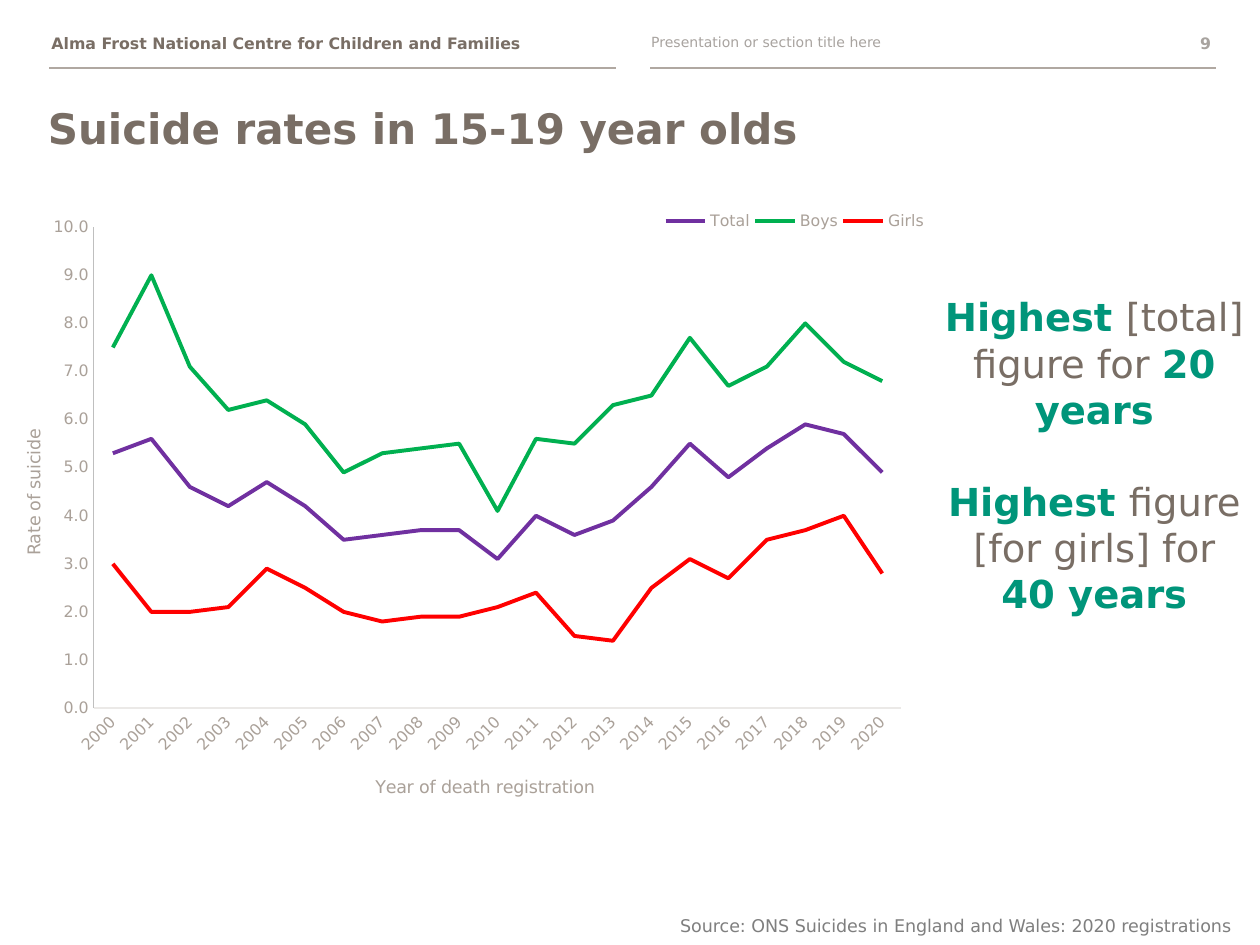
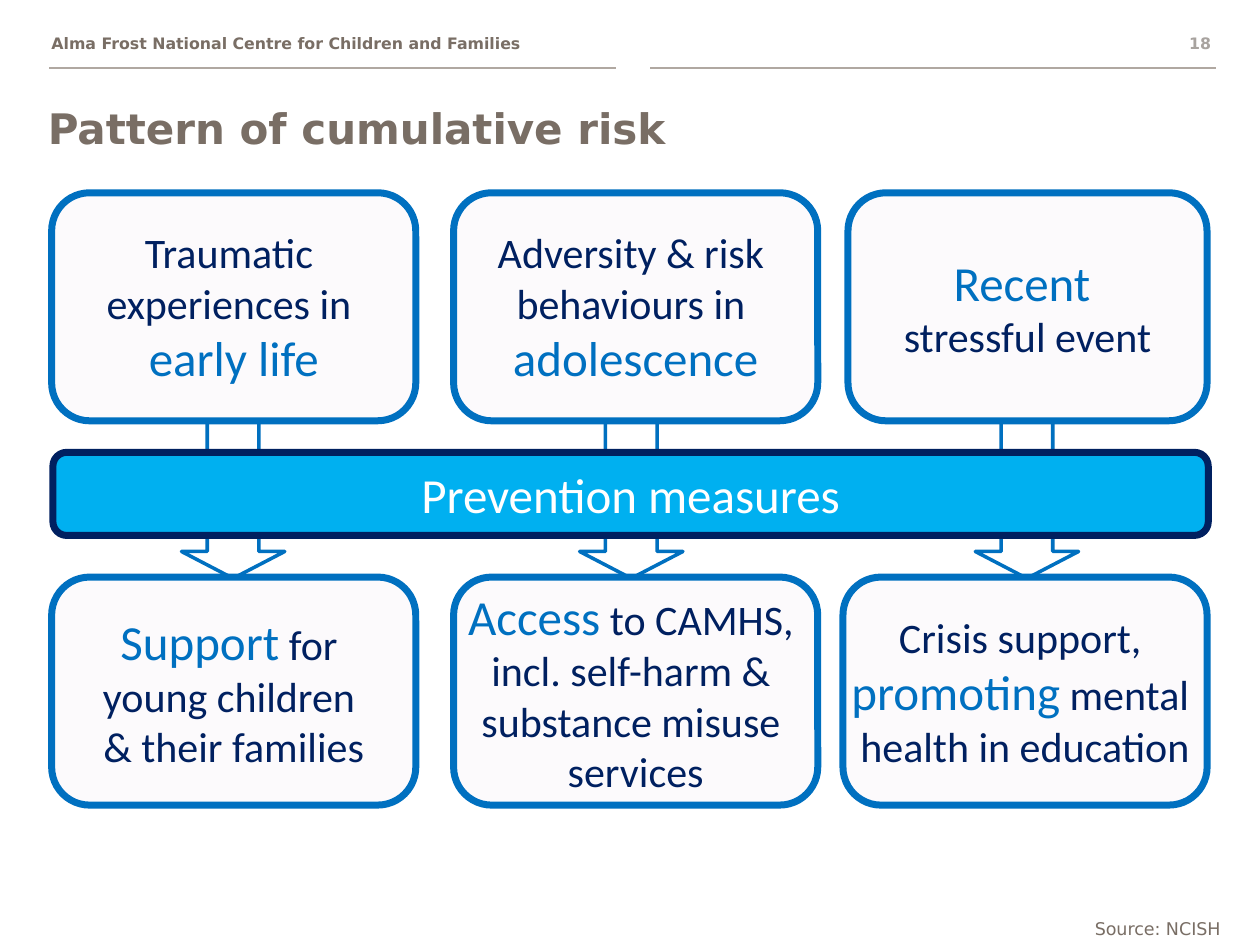
from dataclasses import dataclass

from lxml.etree import SubElement
from pptx import Presentation
from pptx.chart.data import CategoryChartData
from pptx.dml.color import RGBColor
from pptx.enum.chart import XL_CHART_TYPE as ChartType
from pptx.enum.chart import XL_LEGEND_POSITION as LegendPosition
from pptx.enum.chart import XL_TICK_MARK as TickMark
from pptx.enum.shapes import MSO_CONNECTOR as Connector
from pptx.enum.shapes import MSO_SHAPE as Shape
from pptx.enum.text import MSO_ANCHOR as Anchor
from pptx.enum.text import MSO_AUTO_SIZE as AutoSize
from pptx.enum.text import PP_ALIGN as Align
from pptx.oxml.ns import qn
from pptx.util import Inches, Pt


@dataclass(frozen=True)
class Theme:
    font: str = "DejaVu Sans"
    card_font: str = "Calibri"
    brown: str = "796E65"
    rule: str = "B0A8A1"
    header_grey: str = "A8A39F"
    source_grey: str = "7F7F7F"
    chart_grey: str = "AAA199"
    category_line: str = "EBE9E7"
    value_line: str = "BFBFBF"
    green: str = "00957A"
    blue: str = "0070C0"
    bright_blue: str = "00B0F0"
    navy: str = "002060"
    card_fill: str = "FCFAFC"
    white: str = "FFFFFF"
    title: int = 24
    callout: int = 22
    card: int = 24
    card_key: int = 28
    source: int = 10
    header: int = 9
    section: int = 8


THEME = Theme()


def write(frame, paragraphs, font=THEME.font, size=THEME.source, color=THEME.brown,
          bold=False, align=Align.LEFT, anchor=Anchor.TOP, wrap=True, gap=0):
    """Fill a frame; each paragraph is a string or a list of (text, overrides)."""
    frame.word_wrap = wrap
    frame.auto_size = AutoSize.NONE
    frame.vertical_anchor = anchor
    for index, runs in enumerate(paragraphs):
        paragraph = frame.add_paragraph() if index else frame.paragraphs[0]
        paragraph.alignment = align
        paragraph.space_before = Pt(gap if index else 0)
        for text, changes in [(runs, {})] if isinstance(runs, str) else runs:
            look = {"size": size, "color": color, "bold": bold} | changes
            run = paragraph.add_run()
            run.text = text
            run.font.name = font
            run.font.size = Pt(look["size"])
            run.font.bold = look["bold"]
            run.font.color.rgb = RGBColor.from_string(look["color"])


def place_in_chart(element, **position):
    """Give a chart part a manual layout in fractions of the chart."""
    layout = element.find(qn("c:layout"))
    if layout is None:
        layout = element.makeelement(qn("c:layout"))
        overlay = element.find(qn("c:overlay"))
        if overlay is None:
            element.insert(0, layout)
        else:
            overlay.addprevious(layout)
    for child in list(layout):
        layout.remove(child)
    manual = SubElement(layout, qn("c:manualLayout"))
    for tag, value in position.items():
        SubElement(manual, qn(f"c:{tag}")).set("val", str(value))


deck = Presentation()
deck.slide_width, deck.slide_height = Inches(10), Inches(7.5)

# Shared header, title and source line
pages = [
    dict(title="Suicide rates in 15-19 year olds", number="9",
         section="Presentation or section title here",
         source="Source: ONS Suicides in England and Wales: 2020 registrations",
         source_at=(5.3, 7.21, 4.7), source_color=THEME.source_grey),
    dict(title="Pattern of cumulative risk", number="18", section=None,
         source="Source: NCISH",
         source_at=(8.59, 7.24, 1.41), source_color=THEME.brown),
]
for page in pages:
    slide = deck.slides.add_slide(deck.slide_layouts[5])
    for start, end in [(0.39, 4.89), (5.16, 9.65)]:
        rule = slide.shapes.add_connector(
            Connector.STRAIGHT, Inches(start), Inches(0.54), Inches(end), Inches(0.54))
        rule.line.color.rgb = RGBColor.from_string(THEME.rule)
        rule.line.width = Pt(1)
        SubElement(rule._element.spPr, qn("a:effectLst"))

    title = slide.shapes.title
    title.left, title.top = Inches(0.28), Inches(0.76)
    title.width, title.height = Inches(9), Inches(0.76)
    write(title.text_frame, [page["title"]], size=THEME.title, bold=True)

    left, top, width = page["source_at"]
    small_texts = [
        ("Alma Frost National Centre for Children and Families", 0.31, 0.22, 4.48,
         dict(size=THEME.header, bold=True)),
        (page["section"], 5.07, 0.22, 3.86,
         dict(size=THEME.section, color=THEME.header_grey)),
        (page["number"], 9.13, 0.22, 0.58,
         dict(size=THEME.header, color=THEME.header_grey, bold=True, align=Align.RIGHT)),
        (page["source"], left, top, width, dict(color=page["source_color"])),
    ]
    for text, left, top, width, look in small_texts:
        if text:
            box = slide.shapes.add_textbox(
                Inches(left), Inches(top), Inches(width), Inches(0.26))
            write(box.text_frame, [text], **look)

rates_slide, risk_slide = deck.slides

# Suicide rates: line chart
rates = [
    ("Total", "7030A0", (5.3, 5.6, 4.6, 4.2, 4.7, 4.2, 3.5, 3.6, 3.7, 3.7, 3.1,
                         4, 3.6, 3.9, 4.6, 5.5, 4.8, 5.4, 5.9, 5.7, 4.9)),
    ("Boys", "00B050", (7.5, 9, 7.1, 6.2, 6.4, 5.9, 4.9, 5.3, 5.4, 5.5, 4.1,
                        5.6, 5.5, 6.3, 6.5, 7.7, 6.7, 7.1, 8, 7.2, 6.8)),
    ("Girls", "FF0000", (3, 2, 2, 2.1, 2.9, 2.5, 2, 1.8, 1.9, 1.9, 2.1,
                         2.4, 1.5, 1.4, 2.5, 3.1, 2.7, 3.5, 3.7, 4, 2.8)),
]
rate_data = CategoryChartData(number_format="0.0")
rate_data.categories = [str(year) for year in range(2000, 2021)]
for name, _, values in rates:
    rate_data.add_series(name, values)
chart = rates_slide.shapes.add_chart(
    ChartType.LINE, Inches(0.08), Inches(1.6), Inches(7.37), Inches(5.09), rate_data).chart
chart.has_title = False
chart.font.name, chart.font.size = THEME.font, Pt(THEME.source)
chart.font.color.rgb = RGBColor.from_string(THEME.brown)
chart.plots[0].vary_by_categories = False
for series, (_, color, _) in zip(chart.plots[0].series, rates):
    series.smooth = False
    series.format.line.width = Pt(2.25)
    series.format.line.color.rgb = RGBColor.from_string(color)

# Suicide rates: axes and legend
years, rate_axis = chart.category_axis, chart.value_axis
chart.has_legend = True
chart.legend.position = LegendPosition.BOTTOM
chart.legend.include_in_layout = False
for axis, label, line_color, x, y in [
    (years, "Year of death registration", THEME.category_line, 0.39, 0.89),
    (rate_axis, "Rate of suicide", THEME.value_line, 0.01, 0.35),
]:
    axis.has_major_gridlines = False
    axis.major_tick_mark = axis.minor_tick_mark = TickMark.NONE
    axis.format.line.color.rgb = RGBColor.from_string(line_color)
    axis.format.line.width = Pt(0.75)
    write(axis.axis_title.text_frame, [label], color=THEME.chart_grey, align=Align.CENTER)
    place_in_chart(axis.axis_title._element, xMode="edge", yMode="edge", x=x, y=y)
for font in (years.tick_labels.font, rate_axis.tick_labels.font, chart.legend.font):
    font.name, font.size = THEME.font, Pt(THEME.header)
    font.color.rgb = RGBColor.from_string(THEME.chart_grey)
rate_axis.minimum_scale, rate_axis.maximum_scale, rate_axis.major_unit = 0, 10, 1
rate_axis.tick_labels.number_format = "0.0"
rate_axis.tick_labels.number_format_is_linked = False
year_labels = years._element.find(qn("c:txPr")).find(qn("a:bodyPr"))
year_labels.set("rot", "-2700000")
year_labels.set("vert", "horz")
place_in_chart(chart._chartSpace.chart.plotArea, layoutTarget="inner",
               xMode="edge", yMode="edge", x=0.09, y=0.04, w=0.87, h=0.75)
place_in_chart(chart.legend._element, xMode="edge", yMode="edge",
               x=0.7, y=0.01, w=0.29, h=0.04)

# Suicide rates: callout
callout = rates_slide.shapes.add_textbox(
    Inches(7.37), Inches(2.28), Inches(2.63), Inches(2.69))
strong = dict(color=THEME.green, bold=True)
write(callout.text_frame, [
    [("Highest ", strong), ("[total] figure for ", {}), ("20 years", strong)],
    [("Highest ", strong), ("figure [for girls] for ", {}), ("40 years", strong)],
], size=THEME.callout, align=Align.CENTER, gap=26)

# Cumulative risk: arrows from risks to measures, behind the band
for left in (1.44, 4.6, 7.74):
    arrow = risk_slide.shapes.add_shape(
        Shape.DOWN_ARROW, Inches(left), Inches(3.34), Inches(0.82), Inches(1.25))
    arrow.adjustments[0], arrow.adjustments[1] = 0.5, 0.26
    arrow.shadow.inherit = False
    arrow.fill.background()
    arrow.line.color.rgb = RGBColor.from_string(THEME.blue)
    arrow.line.width = Pt(2)

# Cumulative risk: prevention band, risks above and measures below
key = dict(size=THEME.card_key, color=THEME.blue)
card = dict(fill=THEME.card_fill, edge=THEME.blue)
band = dict(fill=THEME.bright_blue, edge=THEME.navy)
panels = [
    (0.42, 3.59, 9.17, 0.66, band,
     [[("Prevention measures", dict(size=THEME.card_key, color=THEME.white))]]),
    (0.41, 1.53, 2.89, 1.81, card,
     ["Traumatic ", "experiences in ", [("early life", key)]]),
    (3.6, 1.53, 2.89, 1.81, card,
     ["Adversity & risk ", "behaviours in ", [("adolescence", key)]]),
    (6.73, 1.53, 2.85, 1.81, card, [[("Recent ", key)], "stressful event"]),
    (0.41, 4.58, 2.89, 1.81, card,
     [[("Support", key), (" for ", {})], "young children ", "& their families"]),
    (3.6, 4.58, 2.89, 1.81, card,
     [[("Access", key), (" to CAMHS, ", {})],
      "incl. self-harm & ", "substance misuse ", "services"]),
    (6.69, 4.58, 2.89, 1.81, card,
     ["Crisis support, ", [("promoting", key), (" mental ", {})], "health in education"]),
]
for left, top, width, height, colors, lines in panels:
    panel = risk_slide.shapes.add_shape(
        Shape.FLOWCHART_ALTERNATE_PROCESS,
        Inches(left), Inches(top), Inches(width), Inches(height))
    panel.shadow.inherit = False
    panel.fill.solid()
    panel.fill.fore_color.rgb = RGBColor.from_string(colors["fill"])
    panel.line.color.rgb = RGBColor.from_string(colors["edge"])
    panel.line.width = Pt(4)
    write(panel.text_frame, lines, font=THEME.card_font, size=THEME.card,
          color=THEME.navy, align=Align.CENTER, anchor=Anchor.MIDDLE, wrap=False)

deck.save("out.pptx")
